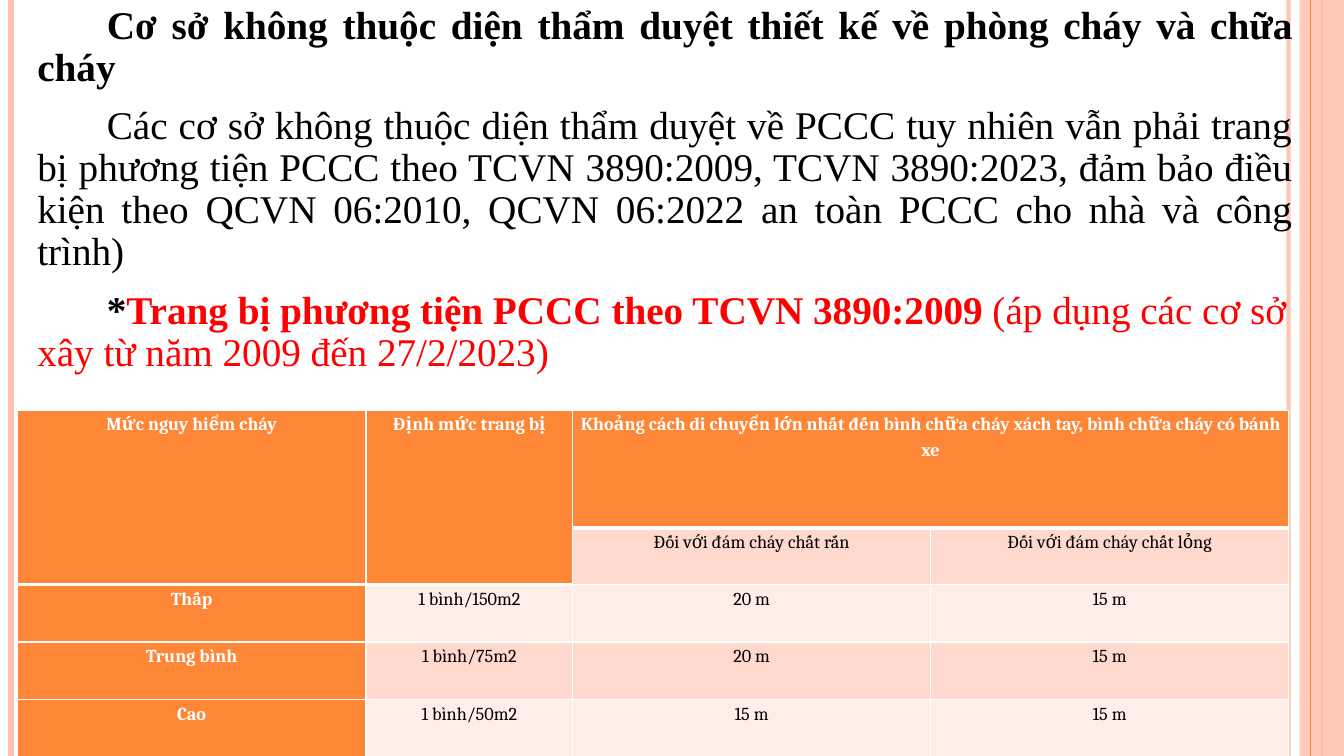
"""Build a slide on fire extinguisher rules with a body text and a table."""
import pptx
import pptx.dml.color
import pptx.enum.shapes
import pptx.enum.text
import pptx.oxml
import pptx.oxml.ns
import pptx.util
from pptx.util import Inches

RGBColor = pptx.dml.color.RGBColor
ALIGN = pptx.enum.text.PP_ALIGN
BLACK = RGBColor(0x00, 0x00, 0x00)
WHITE = RGBColor(0xFF, 0xFF, 0xFF)
RED = RGBColor(0xFF, 0x00, 0x00)
ORANGE = RGBColor(0xFE, 0x86, 0x37)
PEACH = RGBColor(0xFE, 0xC3, 0xAE)
ROSE = RGBColor(0xFF, 0xD9, 0xCE)
PALE = RGBColor(0xFF, 0xED, 0xE8)

STRIPES = [
    (12.78, PEACH, 3, 93),
    (0.11, PEACH, 4.5, 100),
    (13.11, ORANGE, 1.5, 100),
]
INTRO = [
    (ALIGN.JUSTIFY, [
        ("Cơ sở không thuộc diện thẩm duyệt thiết kế về phòng cháy và chữa cháy",
         True, BLACK)]),
    (ALIGN.JUSTIFY, [
        ("Các cơ sở không thuộc diện thẩm duyệt về PCCC tuy nhiên vẫn phải trang bị "
         "phương tiện PCCC theo TCVN 3890:2009, TCVN 3890:2023, đảm bảo điều kiện theo "
         "QCVN 06:2010, QCVN 06:2022 an toàn PCCC cho nhà và công trình)",
         False, BLACK)]),
    (ALIGN.LEFT, [
        ("*", True, BLACK),
        ("Trang bị phương tiện PCCC theo TCVN 3890:2009", True, RED),
        (" (áp dụng các cơ sở xây từ năm 2009 đến 27/2/2023)", False, RED)]),
]
COLS = [3.46, 2.05, 3.55, 3.55]
ROWS = [1.17, 0.56, 0.57, 0.57, 0.57]
CELLS = [
    ["Mức nguy hiểm cháy", "Định mức trang bị",
     "Khoảng cách di chuyển lớn nhất đến bình chữa cháy xách tay, "
     "bình chữa cháy có bánh xe", ""],
    ["", "", "Đối với đám cháy chất rắn", "Đối với đám cháy chất lỏng"],
    ["Thấp", "1 bình/150m2", "20 m", "15 m"],
    ["Trung bình", "1 bình/75m2", "20 m", "15 m"],
    ["Cao", "1 bình/50m2", "15 m", "15 m"],
]


def style(run, face, size, bold, color):
    """Set the font of a run."""
    font = run.font
    font.name, font.size, font.bold = face, pptx.util.Pt(size), bold
    font.color.rgb = color


def fade(shape, alpha):
    """Make the solid colour of a shape partly clear."""
    for color in shape._element.spPr.iter(pptx.oxml.ns.qn("a:srgbClr")):
        pptx.oxml.ns.qn("a:alpha")
        node = color.makeelement(pptx.oxml.ns.qn("a:alpha"), {"val": str(alpha * 1000)})
        color.append(node)


def stripe(slide, left, color, width, alpha=100):
    """Draw a line down the whole slide."""
    line = slide.shapes.add_connector(
        pptx.enum.shapes.MSO_CONNECTOR.STRAIGHT,
        Inches(left), Inches(0), Inches(left), Inches(7.5))
    line.line.color.rgb = color
    line.line.width = pptx.util.Pt(width)
    if alpha < 100:
        fade(line, alpha)
    props = line._element.spPr
    props.append(props.makeelement(pptx.oxml.ns.qn("a:effectLst"), {}))


def band(slide):
    """Draw the band at the right edge."""
    shape = slide.shapes.add_shape(
        pptx.enum.shapes.MSO_SHAPE.RECTANGLE,
        Inches(12.89), Inches(0), Inches(0.44), Inches(7.5))
    shape.shadow.inherit = False
    shape.fill.solid()
    shape.fill.fore_color.rgb = PEACH
    shape.line.fill.background()
    fade(shape, 87)


def intro(slide):
    """Fill the body placeholder and bring it to the front."""
    body = slide.placeholders[1]
    body.left, body.top = Inches(0.17), Inches(0)
    body.width, body.height = Inches(12.75), Inches(7.5)
    frame = body.text_frame
    frame.auto_size = pptx.enum.text.MSO_AUTO_SIZE.NONE
    frame.vertical_anchor = pptx.enum.text.MSO_ANCHOR.TOP
    for index, (align, parts) in enumerate(INTRO):
        para = frame.add_paragraph() if index else frame.paragraphs[0]
        props = para._p.get_or_add_pPr()
        props.set("marL", str(Inches(0.1)))
        props.set("indent", str(Inches(0.69)))
        props.append(props.makeelement(pptx.oxml.ns.qn("a:buNone"), {}))
        para.alignment = align
        para.line_spacing = pptx.util.Pt(30)
        para.space_before = pptx.util.Pt(6 if index else 0)
        para.space_after = pptx.util.Pt(6)
        for text, bold, color in parts:
            run = para.add_run()
            run.text = text
            style(run, "Times New Roman", 28, bold, color)
    slide.shapes._spTree.append(body._element)


def edge(cell, base):
    """Draw white borders, with the bottom one of a given width."""
    props = cell._tc.get_or_add_tcPr()
    for side, width in (("L", 1), ("R", 1), ("T", 1), ("B", base)):
        props.append(pptx.oxml.parse_xml(
            f'<a:ln{side} {pptx.oxml.ns.nsdecls("a")} w="{pptx.util.Pt(width)}">'
            f'<a:solidFill><a:srgbClr val="{WHITE}"/></a:solidFill></a:ln{side}>'))


def entry(cell, text, head, fill, base):
    """Fill and format one table cell."""
    cell.margin_left = cell.margin_right = Inches(0)
    cell.margin_top = cell.margin_bottom = Inches(0)
    edge(cell, base)
    cell.fill.solid()
    cell.fill.fore_color.rgb = fill
    if not text:
        return
    cell.text_frame.text = text
    para = cell.text_frame.paragraphs[0]
    para.alignment = ALIGN.CENTER
    para.line_spacing = pptx.util.Pt(18)
    para.space_before = pptx.util.Pt(0)
    para.space_after = pptx.util.Pt(8)
    style(para.runs[0], "Cambria", 13, head, WHITE if head else BLACK)


def norms(slide):
    """Add the table of extinguisher norms."""
    table = slide.shapes.add_table(
        len(ROWS), len(COLS), Inches(0.17), Inches(4.07),
        Inches(sum(COLS)), Inches(sum(ROWS))).table
    for col, width in zip(table.columns, COLS):
        col.width = Inches(width)
    for row, height in zip(table.rows, ROWS):
        row.height = Inches(height)
    for y, texts in enumerate(CELLS):
        for x, text in enumerate(texts):
            top = y == 0 or (y == 1 and x < 2)
            head = top or x == 0
            fill = ORANGE if head else ROSE if y % 2 else PALE
            entry(table.cell(y, x), text, head, fill, 3 if top else 1)
    table.cell(0, 0).merge(table.cell(1, 0))
    table.cell(0, 1).merge(table.cell(1, 1))
    table.cell(0, 2).merge(table.cell(0, 3))


def main():
    """Build and save the slide."""
    deck = pptx.Presentation()
    deck.slide_width, deck.slide_height = Inches(13.33), Inches(7.5)
    slide = deck.slides.add_slide(deck.slide_layouts[1])
    title = slide.shapes.title._element
    title.getparent().remove(title)
    for spec in STRIPES:
        stripe(slide, *spec)
    band(slide)
    stripe(slide, 13, ORANGE, 0.75)
    intro(slide)
    norms(slide)
    deck.save("out.pptx")


if __name__ == "__main__":
    main()
